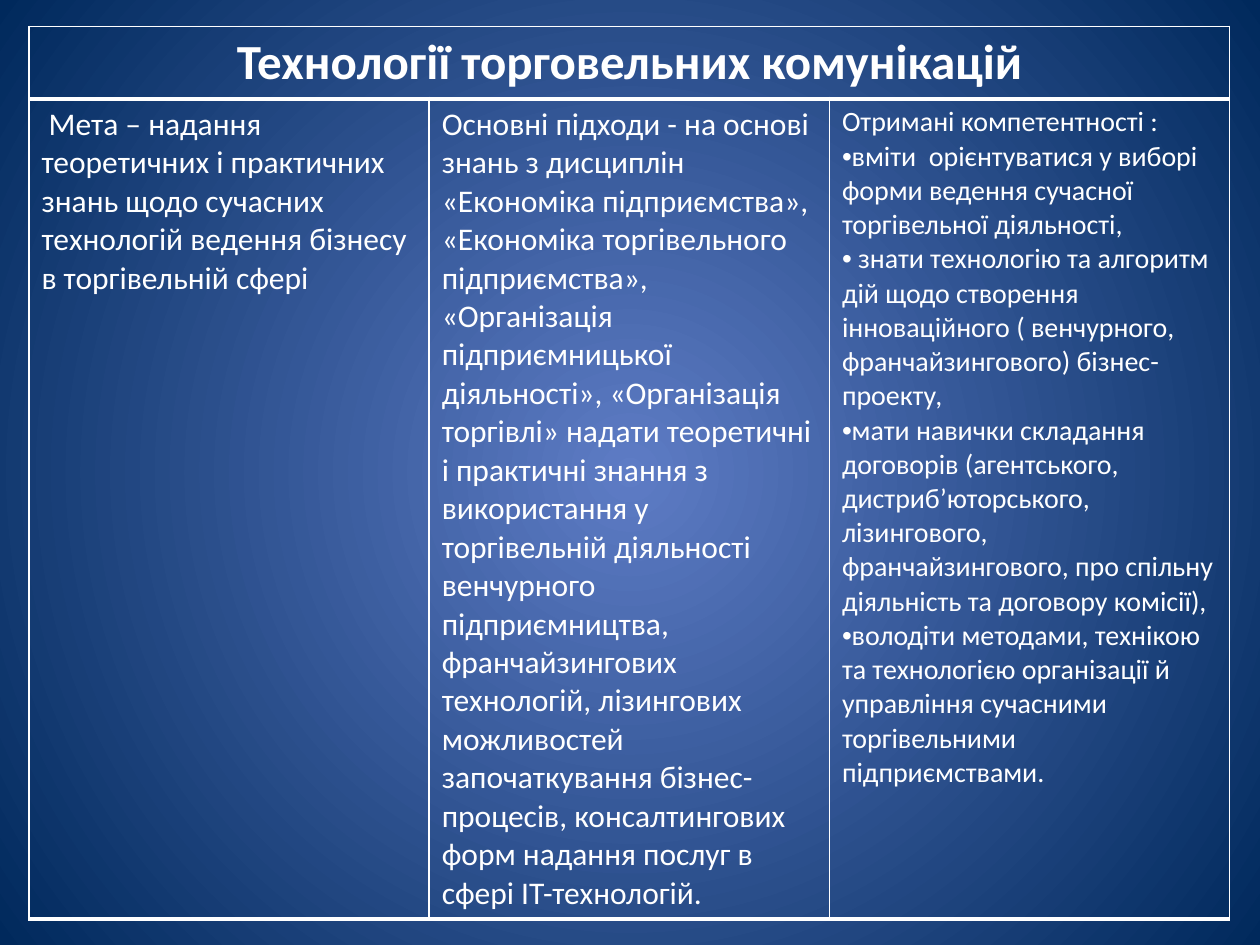
from dataclasses import dataclass

from lxml.etree import SubElement
from pptx import Presentation
from pptx.dml.color import RGBColor
from pptx.enum.text import PP_ALIGN
from pptx.oxml.ns import qn
from pptx.util import Inches, Pt


@dataclass(frozen=True)
class Theme:
    font: str = "Calibri"
    text: str = "FFFFFF"
    line: str = "FFFFFF"
    glow: str = "5E7CC5"
    edge: str = "00295C"
    title_size: int = 28
    body_size: int = 18
    list_size: int = 16
    thin: int = 1
    thick: int = 3


THEME = Theme()
BULLET = "•"
TITLE = "Технології торговельних комунікацій"
GOAL = [
    " Мета – надання теоретичних і практичних знань щодо сучасних технологій "
    "ведення бізнесу в торгівельній сфері"
]
APPROACHES = [
    "Основні підходи - на основі знань з дисциплін «Економіка підприємства», "
    "«Економіка торгівельного підприємства», «Організація підприємницької "
    "діяльності», «Організація торгівлі» надати теоретичні і практичні знання з "
    "використання у торгівельній діяльності венчурного підприємництва, "
    "франчайзингових технологій, лізингових можливостей започаткування "
    "бізнес-процесів, консалтингових форм надання послуг в сфері ІТ-технологій."
]
COMPETENCES = [
    "Отримані компетентності :",
    "вміти  орієнтуватися у виборі форми ведення сучасної торгівельної діяльності,",
    " знати технологію та алгоритм дій щодо створення інноваційного "
    "( венчурного, франчайзингового) бізнес-проекту,",
    "мати навички складання договорів (агентського, дистриб’юторського, "
    "лізингового, франчайзингового, про спільну діяльність та договору комісії),",
    "володіти методами, технікою та технологією організації й управління "
    "сучасними торгівельними підприємствами.",
]


def paint_background(slide):
    """Radial gradient, light in the centre."""
    fill = slide.background.fill
    fill.gradient()
    for stop, color in zip(fill.gradient_stops, (THEME.glow, THEME.edge)):
        stop.color.rgb = RGBColor.from_string(color)
    gradient = next(slide.element.iter(qn("a:gradFill")))
    gradient.remove(gradient.find(qn("a:lin")))
    circle = SubElement(gradient, qn("a:path"), path="circle")
    SubElement(circle, qn("a:fillToRect"), dict.fromkeys("ltrb", "50000"))


def format_cell(cell, top, bottom):
    """Draw the four borders and leave the cell unfilled."""
    properties = cell._tc.get_or_add_tcPr()
    widths = {"L": THEME.thin, "R": THEME.thin, "T": top, "B": bottom}
    for side, width in widths.items():
        line = SubElement(properties, qn(f"a:ln{side}"), w=str(Pt(width)))
        solid = SubElement(line, qn("a:solidFill"))
        SubElement(solid, qn("a:srgbClr"), val=THEME.line)
    cell.fill.background()


def write_cell(cell, lines, size, bold=False, align=PP_ALIGN.LEFT):
    """Write one paragraph a line; those after the first are bulleted."""
    font_format = {"name": THEME.font, "size": Pt(size), "bold": bold}
    frame = cell.text_frame
    for index, text in enumerate(lines):
        paragraph = frame.add_paragraph() if index else frame.paragraphs[0]
        paragraph.alignment = align
        run = paragraph.add_run()
        run.text = text
        for name, value in font_format.items():
            setattr(run.font, name, value)
        run.font.color.rgb = RGBColor.from_string(THEME.text)
        if index:
            properties = paragraph._p.get_or_add_pPr()
            SubElement(properties, qn("a:buFont"), typeface="Arial")
            SubElement(properties, qn("a:buChar"), char=BULLET)


def add_course_table(slide, left, top, width, height):
    """Title row across three columns of course details."""
    columns = [
        (GOAL, THEME.body_size),
        (APPROACHES, THEME.body_size),
        (COMPETENCES, THEME.list_size),
    ]
    table = slide.shapes.add_table(2, len(columns), left, top, width, height).table
    table.first_row = table.horz_banding = False
    title_height = Inches(0.55)
    table.rows[0].height = title_height
    table.rows[1].height = height - title_height

    # Title row
    title = table.cell(0, 0)
    title.merge(table.cell(0, len(columns) - 1))
    write_cell(title, [TITLE], THEME.title_size, True, PP_ALIGN.CENTER)

    # Detail columns
    for index, (lines, size) in enumerate(columns):
        format_cell(table.cell(0, index), THEME.thin, THEME.thick)
        detail = table.cell(1, index)
        format_cell(detail, THEME.thick, THEME.thick)
        write_cell(detail, lines, size)


def main():
    presentation = Presentation()
    presentation.slide_width = Inches(10)
    presentation.slide_height = Inches(7.5)
    slide = presentation.slides.add_slide(presentation.slide_layouts[6])
    paint_background(slide)
    add_course_table(slide, Inches(0.23), Inches(0.21), Inches(9.53), Inches(6.97))
    presentation.save("out.pptx")


if __name__ == "__main__":
    main()
